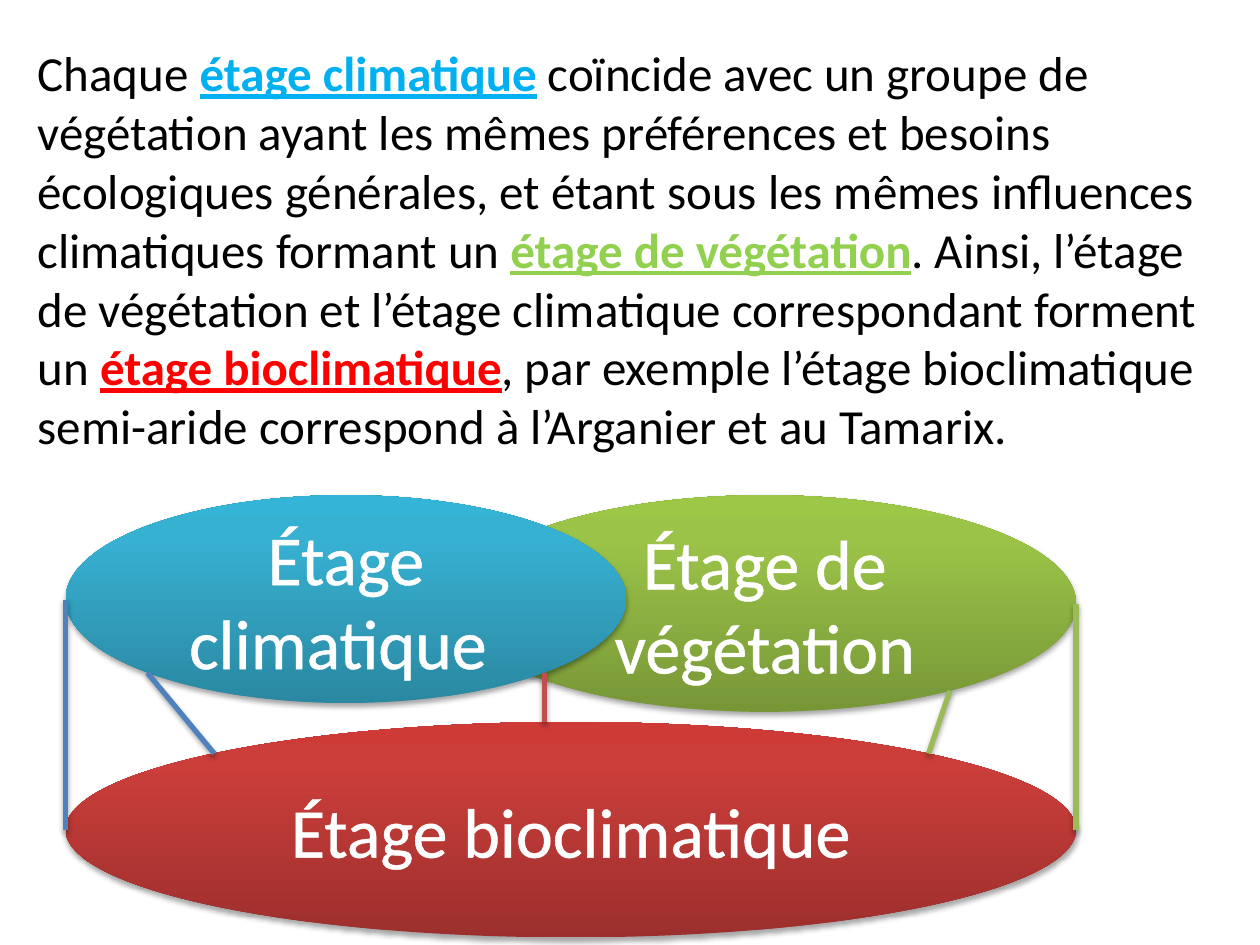
"""Build the slide on climatic, vegetation and bioclimatic stages."""
from dataclasses import dataclass

from lxml import etree
from pptx import Presentation
from pptx import util as u
from pptx.dml.color import RGBColor
from pptx.enum import shapes, text
from pptx.oxml import parse_xml
from pptx.oxml.ns import nsdecls, qn


@dataclass(frozen=True)
class Theme:
    """Colours, font and sizes of the slide."""
    font: str = "Calibri"
    body_size: int = 28
    label_size: int = 40
    line_width: int = 3
    outline_width: float = 1.45
    body: str = "000000"
    label: str = "FFFFFF"
    climate_word: str = "00B0F0"
    vegetation_word: str = "92D050"
    bioclimate_word: str = "FF0000"
    climate_line: str = "4F81BD"
    vegetation_line: str = "9BBB59"
    bioclimate_line: str = "C0504D"
    climate_fill: tuple = ("2A88A2", "37B1D2", "34B4D6")
    vegetation_fill: tuple = ("779737", "9BC348", "9DC746")
    bioclimate_fill: tuple = ("9C2F2D", "CB3E3A", "CE3B37")
    gradient_stops: tuple = (0, 80, 100)


class SlideBuilder:
    """Draw styled elements on one slide."""

    def __init__(self, slide, theme):
        self.slide = slide
        self.theme = theme

    def add_shadow(self, shape):
        """Give a shape or connector a soft shadow below it."""
        properties = shape._element.spPr
        for effects in properties.findall(qn("a:effectLst")):
            properties.remove(effects)
        properties.append(parse_xml(
            f'<a:effectLst {nsdecls("a")}>'
            f'<a:outerShdw blurRad="{u.Pt(3.1)}" dist="{u.Pt(1.8)}" dir="5400000" rotWithShape="0">'
            '<a:srgbClr val="000000"><a:alpha val="35000"/></a:srgbClr>'
            '</a:outerShdw></a:effectLst>'))

    def fill_gradient(self, shape, colors):
        """Fill a shape with a gradient that rises from its base."""
        shape.fill.gradient()
        shape.fill.gradient_angle = 90
        stops = shape._element.spPr.find(qn("a:gradFill")).find(qn("a:gsLst"))
        for stop in list(stops):
            stops.remove(stop)
        for position, color in zip(self.theme.gradient_stops, colors):
            stop = etree.SubElement(stops, qn("a:gs"), pos=str(position * 1000))
            etree.SubElement(stop, qn("a:srgbClr"), val=color)

    def outline_run(self, run):
        """Outline the letters of a run in the label colour."""
        run._r.get_or_add_rPr().insert(0, parse_xml(
            f'<a:ln {nsdecls("a")} w="{u.Pt(self.theme.outline_width)}">'
            f'<a:solidFill><a:srgbClr val="{self.theme.label}"/></a:solidFill></a:ln>'))

    def ellipse(self, label, left, top, width, height, colors):
        """Add a labelled ellipse."""
        shape = self.slide.shapes.add_shape(
            shapes.MSO_SHAPE.OVAL, *map(u.Inches, (left, top, width, height)))
        self.fill_gradient(shape, colors)
        shape.line.fill.background()
        self.add_shadow(shape)
        frame = shape.text_frame
        frame.word_wrap = True
        frame.vertical_anchor = text.MSO_ANCHOR.MIDDLE
        paragraph = frame.paragraphs[0]
        paragraph.alignment = text.PP_ALIGN.CENTER
        paragraph.font.name = self.theme.font
        paragraph.font.size = u.Pt(self.theme.label_size)
        run = paragraph.add_run()
        run.text = label
        run.font.color.rgb = RGBColor.from_string(self.theme.label)
        self.outline_run(run)

    def body_text(self, pieces, left, top, width, height):
        """Add a paragraph whose coloured pieces are key terms."""
        shape = self.slide.shapes.add_textbox(*map(u.Inches, (left, top, width, height)))
        frame = shape.text_frame
        frame.word_wrap = True
        frame.auto_size = text.MSO_AUTO_SIZE.SHAPE_TO_FIT_TEXT
        paragraph = frame.paragraphs[0]
        paragraph.font.name = self.theme.font
        paragraph.font.size = u.Pt(self.theme.body_size)
        for words, color in pieces:
            run = paragraph.add_run()
            run.text = words
            run.font.color.rgb = RGBColor.from_string(color or self.theme.body)
            if color:
                run.font.bold = run.font.underline = True

    def line(self, start, end, color):
        """Add a straight line between two points."""
        connector = self.slide.shapes.add_connector(
            shapes.MSO_CONNECTOR.STRAIGHT, *map(u.Inches, (*start, *end)))
        connector.line.color.rgb = RGBColor.from_string(color)
        connector.line.width = u.Pt(self.theme.line_width)
        self.add_shadow(connector)


def main():
    """Build and save the presentation."""
    theme = Theme()
    presentation = Presentation()
    presentation.slide_width = u.Inches(10)
    presentation.slide_height = u.Inches(7.5)
    builder = SlideBuilder(presentation.slides.add_slide(presentation.slide_layouts[6]), theme)

    left, right, upper_top, lower_top = 0.52, 8.54, 3.93, 5.73
    builder.ellipse("Étage de végétation", 3.6, upper_top, right - 3.6, 1.72, theme.vegetation_fill)
    builder.body_text([
        ("Chaque ", None),
        ("étage climatique", theme.climate_word),
        (" coïncide avec un groupe de végétation ayant les mêmes préférences et besoins "
         "écologiques générales, et étant sous les mêmes influences climatiques formant un ", None),
        ("étage de végétation", theme.vegetation_word),
        (". Ainsi, l’étage de végétation et l’étage climatique correspondant forment un ", None),
        ("étage bioclimatique", theme.bioclimate_word),
        (", par exemple l’étage bioclimatique semi-aride correspond à l’Arganier et au Tamarix.",
         None),
    ], 0.2, 0.29, 9.53, 3.4)
    builder.ellipse("Étage climatique ", left, upper_top, 4.45, 1.65, theme.climate_fill)
    builder.ellipse("Étage bioclimatique", left, lower_top, right - left, 1.71,
                    theme.bioclimate_fill)

    for start, end, color in (
        ((right, 6.59), (right, 4.79), theme.vegetation_line),
        ((left, 4.76), (left, 6.59), theme.climate_line),
        ((4.32, 5.34), (4.32, lower_top), theme.bioclimate_line),
        ((7.54, 5.48), (7.37, 5.98), theme.vegetation_line),
        ((1.17, 5.34), (1.7, 5.98), theme.climate_line),
    ):
        builder.line(start, end, color)
    presentation.save("out.pptx")


if __name__ == "__main__":
    main()
